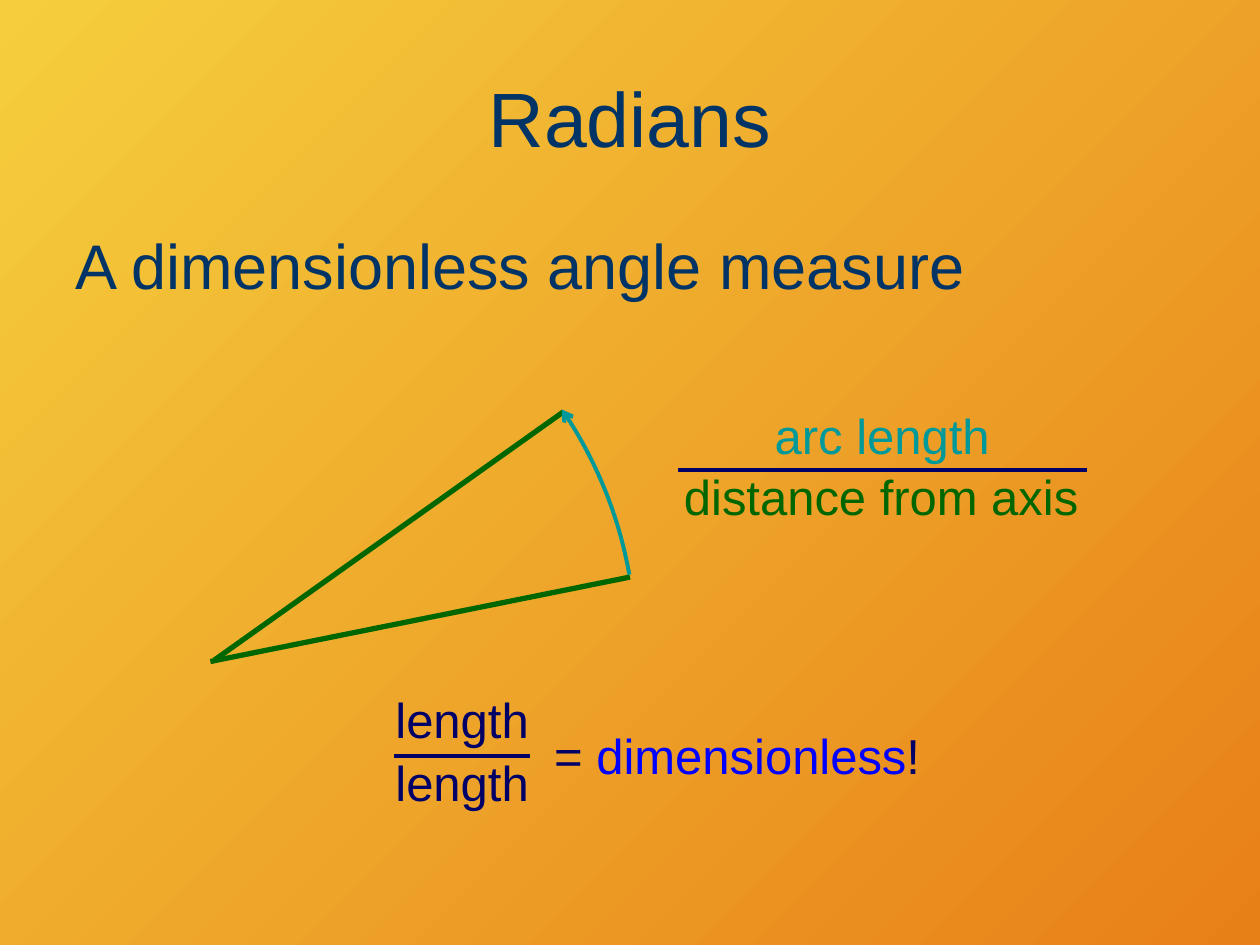
from math import atan2, cos, hypot, sin

from lxml import etree
from pptx import Presentation
from pptx.dml.color import RGBColor
from pptx.enum.shapes import MSO_CONNECTOR
from pptx.enum.text import MSO_ANCHOR, PP_ALIGN
from pptx.oxml.ns import qn
from pptx.util import Inches, Pt

YELLOW = RGBColor(0xF5, 0xCE, 0x3D)
ORANGE = RGBColor(0xE8, 0x80, 0x18)
SLATE = RGBColor(0x00, 0x33, 0x66)
NAVY = RGBColor(0x00, 0x00, 0x66)
BLUE = RGBColor(0x00, 0x00, 0xFF)
GREEN = RGBColor(0x00, 0x66, 0x00)
TEAL = RGBColor(0x00, 0x99, 0x99)

prs = Presentation()
prs.slide_width = Inches(10)
prs.slide_height = Inches(7.5)
slide = prs.slides.add_slide(prs.slide_layouts[6])

backdrop = slide.background.fill
backdrop.gradient()
backdrop.gradient_angle = 315
for stop, color in zip(backdrop.gradient_stops, (YELLOW, ORANGE)):
    stop.color.rgb = color


def add_text(left, top, width, height, size, runs, wrap=False):
    box = slide.shapes.add_textbox(
        Inches(left), Inches(top), Inches(width), Inches(height))
    box.text_frame.word_wrap = wrap
    for text, color in runs:
        run = box.text_frame.paragraphs[0].add_run()
        run.text = text
        run.font.name = "Arial"
        run.font.size = Pt(size)
        run.font.color.rgb = color
    return box.text_frame


def add_line(x1, y1, x2, y2, color, weight):
    line = slide.shapes.add_connector(
        MSO_CONNECTOR.STRAIGHT, Inches(x1), Inches(y1), Inches(x2), Inches(y2))
    line.line.color.rgb = color
    line.line.width = Pt(weight)
    etree.SubElement(line._element.spPr, qn("a:effectLst"))


title = add_text(0.5, 0.3, 9, 1.25, 44, [("Radians", SLATE)], wrap=True)
title.vertical_anchor = MSO_ANCHOR.MIDDLE
title.paragraphs[0].alignment = PP_ALIGN.CENTER

definition = add_text(0.5, 1.75, 9, 0.92, 36,
                      [("A dimensionless angle measure", SLATE)], wrap=True)
definition.paragraphs[0].space_before = Pt(4)

add_line(1.7, 5.24, 4.47, 3.27, GREEN, 3)
add_line(1.67, 5.25, 5, 4.58, GREEN, 3)

center_x, center_y = 1.68, 5.15
radius = hypot(4.46 - center_x, 3.25 - center_y)
tip_angle = atan2(3.25 - center_y, 4.46 - center_x)
base_angle = atan2(4.56 - center_y, 5 - center_x)
steps = 32
arc_points = []
for step in range(steps + 1):
    angle = tip_angle + (base_angle - tip_angle) * step / steps
    arc_points.append((Inches(center_x + radius * cos(angle)),
                       Inches(center_y + radius * sin(angle))))
builder = slide.shapes.build_freeform(*arc_points[0])
builder.add_line_segments(arc_points[1:], close=False)
arc = builder.convert_to_shape()
arc.shadow.inherit = False
arc.fill.background()
arc.line.color.rgb = TEAL
arc.line.width = Pt(2.25)
etree.SubElement(arc.line._get_or_add_ln(), qn("a:headEnd"), type="arrow")

add_text(4.3, 5.71, 3.11, 0.57, 28,
         [("= ", NAVY), ("dimensionless", BLUE), ("!", NAVY)])
for top in (5.42, 5.92):
    add_text(3.04, top, 1.26, 0.57, 28, [("length", NAVY)])
add_line(3.13, 6, 4.21, 6, NAVY, 2.25)

add_text(6.05, 3.17, 1.91, 0.57, 28, [("arc length", TEAL)])
add_text(5.33, 3.65, 3.34, 0.57, 28, [("distance from axis", GREEN)])
add_line(5.38, 3.73, 8.63, 3.73, NAVY, 2.25)

prs.save("out.pptx")
